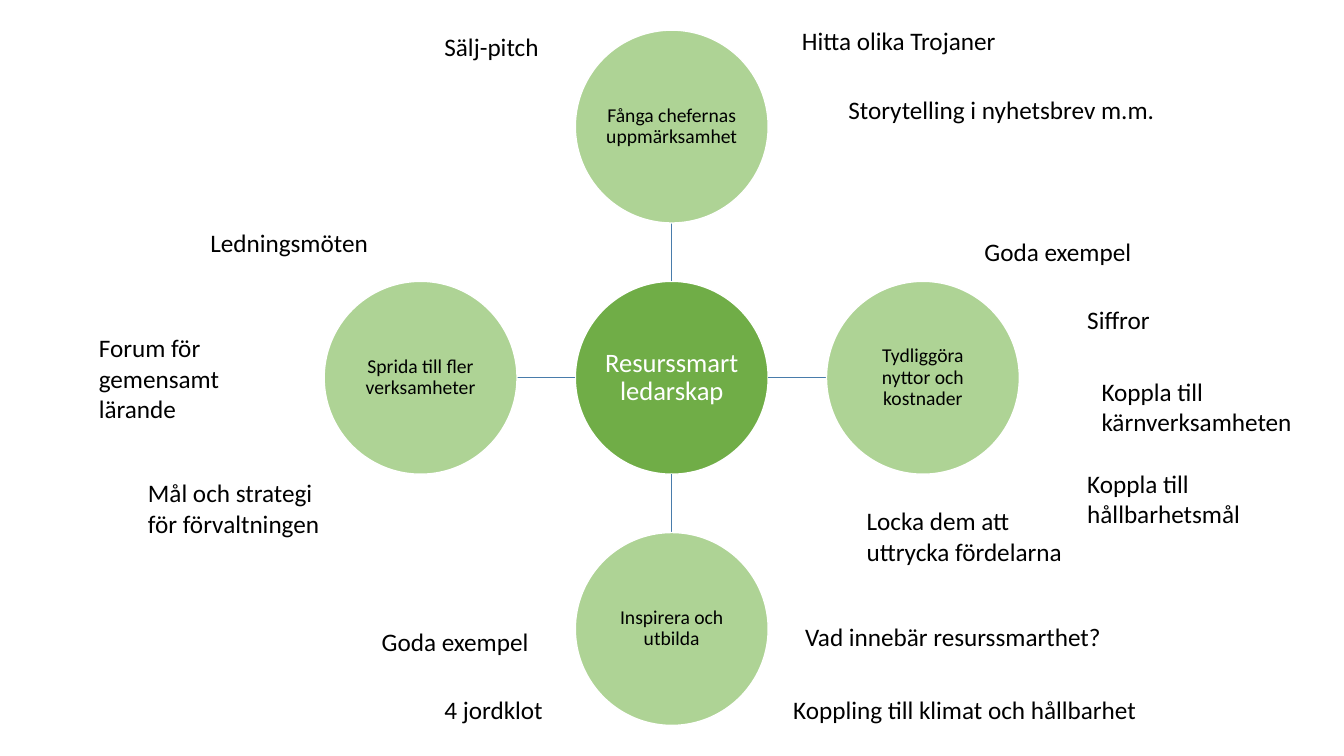
import pptx
import pptx.util
import pptx.dml.color
import pptx.enum.shapes
import pptx.enum.text
import lxml.etree

Cm = pptx.util.Cm
Pt = pptx.util.Pt

COLORS = {
    "hub": "70AD47",
    "theme": "AED395",
    "spoke": "497CAB",
    "white": "FFFFFF",
    "black": "000000",
}
FONT = "Calibri"

hub = "Resurssmart ledarskap"
themes = [
    ("Fånga chefernas uppmärksamhet", 0, -1),
    ("Tydliggöra nyttor och kostnader", 1, 0),
    ("Inspirera och utbilda", 0, 1),
    ("Sprida till fler verksamheter", -1, 0),
]
# text, left, top, width, lines
ideas = [
    ("Goda exempel", 24.56, 5.84, 5.94, 1),
    ("Siffror", 27.15, 7.54, 5.94, 1),
    ("Koppla till kärnverksamheten", 27.51, 9.35, 5.94, 2),
    ("Locka dem att uttrycka fördelarna", 21.59, 12.62, 5.94, 2),
    ("Goda exempel", 9.37, 15.67, 4.45, 1),
    ("Koppla till hållbarhetsmål", 27.15, 11.68, 4.7, 2),
    ("4 jordklot", 10.95, 17.37, 3.58, 1),
    ("Vad innebär resurssmarthet?", 20.04, 15.52, 8.28, 1),
    ("Koppling till klimat och hållbarhet", 19.74, 17.37, 9.17, 1),
    ("Ledningsmöten", 5.05, 5.61, 4.85, 1),
    ("Forum för gemensamt lärande", 2.24, 8.26, 4.85, 3),
    ("Mål och strategi för förvaltningen", 3.48, 11.91, 4.85, 2),
    ("Sälj-pitch", 10.95, 0.66, 3.45, 1),
    ("Hitta olika Trojaner", 19.96, 0.51, 5.94, 1),
    ("Storytelling i nyhetsbrev m.m.", 21.13, 2.24, 10.01, 1),
]

CENTER_X, CENTER_Y = 16.93, 9.52
RADIUS = 2.43
DISTANCE = 6.33
LINE_HEIGHT = 0.77
BOX_PADDING = 0.25


def color(name):
    return pptx.dml.color.RGBColor.from_string(COLORS[name])


def write(paragraph, text, size, ink):
    paragraph.text = text
    paragraph.font.name = FONT
    paragraph.font.size = Pt(size)
    paragraph.font.color.rgb = color(ink)


def add_circle(slide, text, x, y, fill, size, ink):
    circle = slide.shapes.add_shape(
        pptx.enum.shapes.MSO_SHAPE.OVAL,
        Cm(x - RADIUS), Cm(y - RADIUS), Cm(2 * RADIUS), Cm(2 * RADIUS))
    circle.shadow.inherit = False
    circle.fill.solid()
    circle.fill.fore_color.rgb = color(fill)
    circle.line.color.rgb = color("white")
    circle.line.width = Pt(1)
    frame = circle.text_frame
    frame.word_wrap = True
    frame.vertical_anchor = pptx.enum.text.MSO_ANCHOR.MIDDLE
    frame.margin_left = frame.margin_right = Cm(0.03)
    frame.margin_top = frame.margin_bottom = Cm(0.03)
    label = frame.paragraphs[0]
    write(label, text, size, ink)
    label.alignment = pptx.enum.text.PP_ALIGN.CENTER
    label.line_spacing = 0.9
    label.space_after = Pt(round(0.35 * size))


def add_spoke(slide, dx, dy):
    near, far = RADIUS, DISTANCE - RADIUS
    spoke = slide.shapes.add_connector(
        pptx.enum.shapes.MSO_CONNECTOR.STRAIGHT,
        Cm(CENTER_X + dx * near), Cm(CENTER_Y + dy * near),
        Cm(CENTER_X + dx * far), Cm(CENTER_Y + dy * far))
    spoke.line.color.rgb = color("spoke")
    spoke.line.width = Pt(1)
    lxml.etree.SubElement(
        spoke._element.spPr, pptx.oxml.ns.qn("a:effectLst"))


def add_idea(slide, text, left, top, width, lines):
    height = lines * LINE_HEIGHT + BOX_PADDING
    idea = slide.shapes.add_textbox(Cm(left), Cm(top), Cm(width), Cm(height))
    idea.text_frame.word_wrap = True
    idea.text_frame.auto_size = pptx.enum.text.MSO_AUTO_SIZE.SHAPE_TO_FIT_TEXT
    write(idea.text_frame.paragraphs[0], text, 18, "black")


def main():
    deck = pptx.Presentation()
    deck.slide_width, deck.slide_height = Cm(33.87), Cm(19.05)
    slide = deck.slides.add_slide(deck.slide_layouts[6])

    add_circle(slide, hub, CENTER_X, CENTER_Y, "hub", 19, "white")
    for text, dx, dy in themes:
        add_spoke(slide, dx, dy)
        add_circle(slide, text, CENTER_X + dx * DISTANCE,
                   CENTER_Y + dy * DISTANCE, "theme", 14, "black")
    for idea in ideas:
        add_idea(slide, *idea)

    deck.save("out.pptx")


if __name__ == "__main__":
    main()
